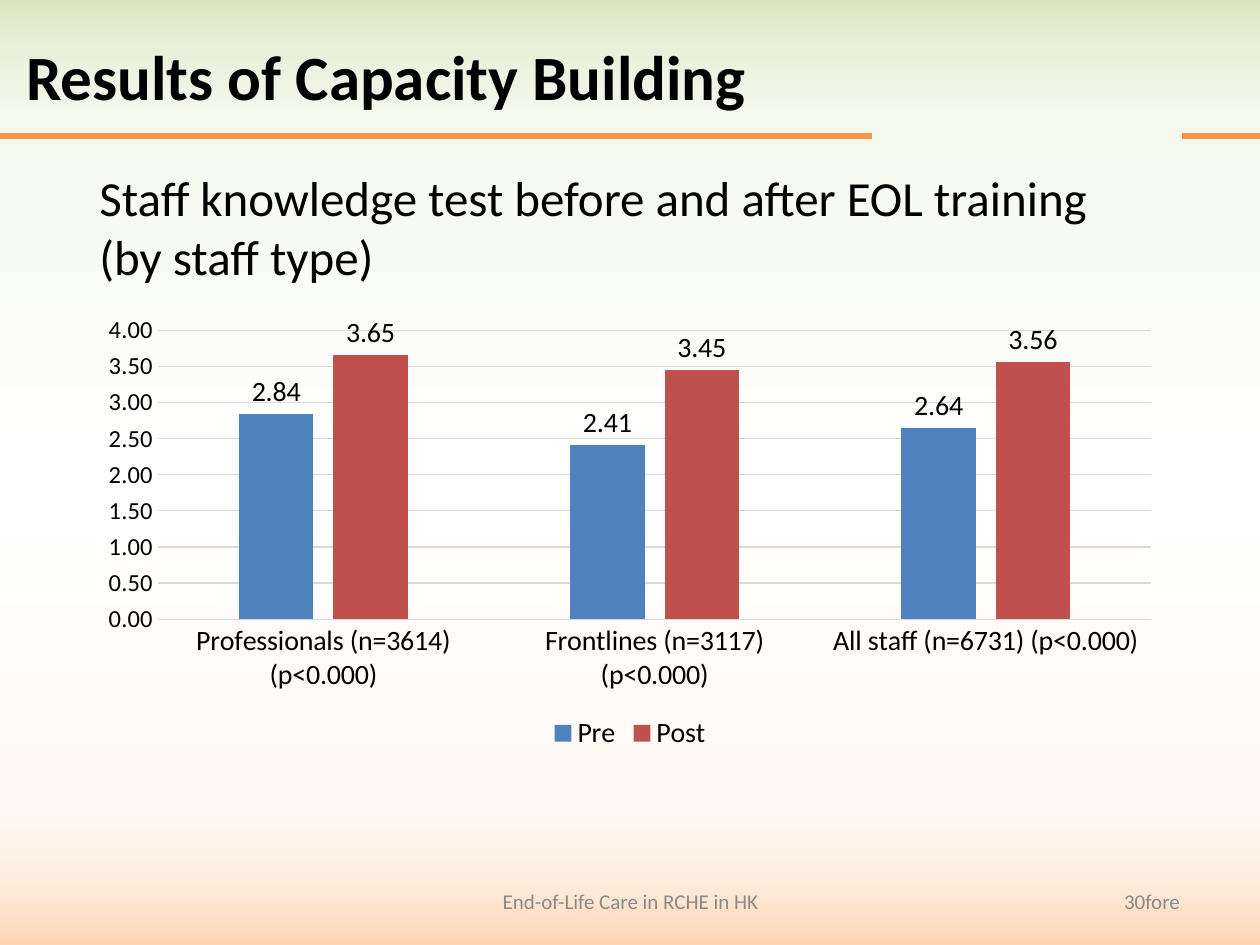
from lxml.etree import SubElement as Sub
from pptx import Presentation
from pptx.chart.data import CategoryChartData
from pptx.dml.color import RGBColor as RGB
from pptx.enum.chart import XL_CHART_TYPE as Kind, XL_LABEL_POSITION as Spot
from pptx.enum.chart import XL_LEGEND_POSITION as Side, XL_TICK_MARK as Tick
from pptx.enum.shapes import MSO_CONNECTOR as Link, MSO_SHAPE as Form
from pptx.enum.text import MSO_ANCHOR as Anchor, PP_ALIGN as Align
from pptx.oxml.ns import qn
from pptx.util import Inches, Pt

FONT = "Calibri"
BLACK = RGB(0x00, 0x00, 0x00)
GREY = RGB(0x89, 0x89, 0x89)
PALE = RGB(0xD9, 0xD9, 0xD9)
ORANGE = RGB(0xF7, 0x96, 0x46)
BLUE = RGB(0x4F, 0x81, 0xBD)
RED = RGB(0xC0, 0x50, 0x4D)

WIDE, HIGH = 10, 7.5
LEFT = 0.69
FOOT = 6.95
RULE = 1.08

# Percent of the way from the bottom to the top, and colour
FADE = [
    (0, RGB(0xFC, 0xD5, 0xB5)), (7, RGB(0xFE, 0xED, 0xDF)),
    (14, RGB(0xFF, 0xF9, 0xF4)), (50, RGB(0xFF, 0xFF, 0xFF)),
    (87, RGB(0xF4, 0xF8, 0xED)), (94, RGB(0xE8, 0xF0, 0xD9)),
    (100, RGB(0xD7, 0xE4, 0xBD)),
]
RULES = [(9.38, WIDE), (0, 6.92)]

# Words, box, size, colour, bold, alignment, anchor
TEXTS = [
    ("Staff knowledge test before and after EOL training (by staff type)",
     (LEFT, 1.28, 8.3, 1.04), 28, BLACK, False, Align.LEFT, Anchor.MIDDLE),
    ("End-of-Life Care in RCHE in HK",
     (3.42, FOOT, 3.17, 0.4), 12, GREY, False, Align.CENTER, Anchor.MIDDLE),
    ("30fore ",
     (7.17, FOOT, 2.33, 0.4), 12, GREY, False, Align.RIGHT, Anchor.MIDDLE),
    ("Results of Capacity Building",
     (0.11, 0.32, 7.48, 0.69), 36, BLACK, True, Align.LEFT, Anchor.TOP),
]

CHART = (LEFT, 2.43, WIDE - 2 * LEFT, 3.57)
GROUPS = ["Professionals (n=3614) (p<0.000)", "Frontlines (n=3117) (p<0.000)",
          "All staff (n=6731) (p<0.000)"]
SCORES = [("Pre", (2.84, 2.41, 2.64), BLUE), ("Post", (3.65, 3.45, 3.56), RED)]


def inch(box):
    return [Inches(n) for n in box]


def style(font, size, color=BLACK, bold=False):
    font.name, font.size, font.bold = FONT, Pt(size), bold
    font.color.rgb = color


def add_fade(slide):
    """Cover the slide with the many-stop gradient."""
    back = slide.shapes.add_shape(Form.RECTANGLE, *inch((0, -0.08, WIDE, HIGH + 0.08)))
    back.shadow.inherit = False
    back.line.fill.background()
    back.fill.gradient()
    back.fill.gradient_angle = 90
    stops = back.fill._fill._gradFill.find(qn("a:gsLst"))
    for old in list(stops):
        stops.remove(old)
    for share, color in FADE:
        stop = Sub(stops, qn("a:gs"), pos=str(share * 1000))
        Sub(stop, qn("a:srgbClr"), val=str(color))


def add_rule(slide, start, end):
    rule = slide.shapes.add_connector(Link.STRAIGHT, *inch((start, RULE, end, RULE)))
    rule.line.color.rgb = ORANGE
    rule.line.width = Pt(3)
    Sub(rule._element.spPr, qn("a:effectLst"))


def add_text(slide, words, box, size, color, bold, align, anchor):
    frame = slide.shapes.add_textbox(*inch(box)).text_frame
    frame.word_wrap = True
    frame.vertical_anchor = anchor
    par = frame.paragraphs[0]
    par.alignment = align
    if bold:
        par.line_spacing = 0.9
    run = par.add_run()
    run.text = words
    style(run.font, size, color, bold)


def add_scores(slide):
    data = CategoryChartData(number_format="0.00")
    data.categories = GROUPS
    for name, vals, _ in SCORES:
        data.add_series(name, vals)
    chart = slide.shapes.add_chart(Kind.COLUMN_CLUSTERED, *inch(CHART), data).chart
    style(chart.font, 10)
    chart.has_title = False
    chart.has_legend = True
    chart.legend.position = Side.BOTTOM
    chart.legend.include_in_layout = False
    style(chart.legend.font, 16)

    cats, vals = chart.category_axis, chart.value_axis
    for axis, size in ((cats, 16), (vals, 14)):
        axis.major_tick_mark = axis.minor_tick_mark = Tick.NONE
        style(axis.tick_labels.font, size)
    vals.minimum_scale, vals.maximum_scale, vals.major_unit = 0, 4, 0.5
    vals.tick_labels.number_format = "0.00"
    vals.tick_labels.number_format_is_linked = False
    vals.format.line.fill.background()
    for line in (cats.format.line, vals.major_gridlines.format.line):
        line.color.rgb = PALE
        line.width = Pt(0.75)

    plot = chart.plots[0]
    plot.vary_by_categories = False
    plot.gap_width, plot.overlap = 219, -27
    for bars, (_, _, color) in zip(plot.series, SCORES):
        bars.format.fill.solid()
        bars.format.fill.fore_color.rgb = color
        tags = bars.data_labels
        tags.show_value = True
        tags.position = Spot.OUTSIDE_END
        tags.number_format = "0.00"
        tags.number_format_is_linked = False
        style(tags.font, 16)


def main():
    deck = Presentation()
    deck.slide_width, deck.slide_height = inch((WIDE, HIGH))
    slide = deck.slides.add_slide(deck.slide_layouts[6])
    add_fade(slide)
    for ends in RULES:
        add_rule(slide, *ends)
    add_scores(slide)
    for item in TEXTS:
        add_text(slide, *item)
    deck.save("out.pptx")


if __name__ == "__main__":
    main()
